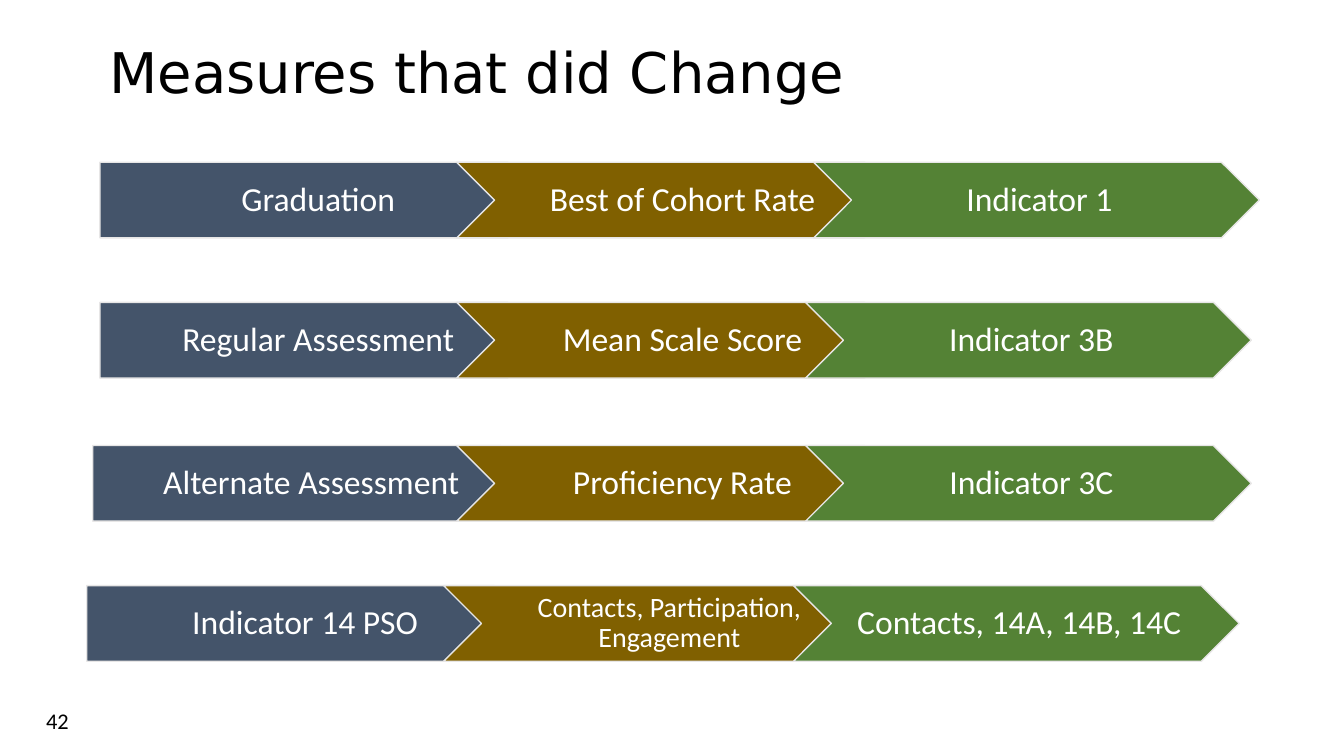
from dataclasses import dataclass

from pptx import Presentation
from pptx.dml.color import RGBColor as RGB
from pptx.enum.shapes import MSO_SHAPE as SHAPE
from pptx.enum.text import MSO_ANCHOR as ANCHOR, PP_ALIGN as ALIGN
from pptx.util import Pt

PX = 9144  # EMU per px, 100 px to the inch


@dataclass(frozen=True)
class Theme:
    title_font: str = "DejaVu Sans"
    body_font: str = "Calibri"
    title_size: int = 40
    step_size: int = 24
    small_size: int = 20
    number_size: int = 16
    black: str = "000000"
    white: str = "FFFFFF"
    outline: str = "E7E6E6"
    steps: tuple = ("44546A", "806000", "548235")


T = Theme()
STEP_W, STEP_H = 442, 75

# Top of each row, left edge of each step, and the step labels
ROWS = [
    (161, (99, 453, 807), ("Graduation", "Best of Cohort Rate", "Indicator 1")),
    (300, (99, 453, 799), ("Regular Assessment", "Mean Scale Score", "Indicator 3B")),
    (442, (92, 453, 799), ("Alternate Assessment", "Proficiency Rate", "Indicator 3C")),
    (581, (86, 440, 787), ("Indicator 14 PSO", "Contacts, Participation, Engagement",
                           "Contacts, 14A, 14B, 14C")),
]


def emu(*lengths):
    return [n * PX for n in lengths]


def write(sp, text, font, size, color, align=ALIGN.LEFT, spacing=1.0):
    tf = sp.text_frame
    tf.word_wrap = True
    tf.vertical_anchor = ANCHOR.MIDDLE
    p = tf.paragraphs[0]
    p.text = text
    p.alignment = align
    p.line_spacing = spacing
    p.font.name, p.font.size = font, Pt(size)
    p.font.color.rgb = RGB.from_string(color)
    return tf


def add_title(s, box, text):
    sp = s.shapes.add_textbox(*emu(*box))
    write(sp, text, T.title_font, T.title_size, T.black, spacing=0.9)


def add_step(group, box, column, label):
    kind = SHAPE.CHEVRON if column else SHAPE.PENTAGON
    sp = group.shapes.add_shape(kind, *emu(*box))
    sp.shadow.inherit = False
    sp.fill.solid()
    sp.fill.fore_color.rgb = RGB.from_string(T.steps[column])
    sp.line.color.rgb = RGB.from_string(T.outline)
    sp.line.width = Pt(1)

    # Long labels take the smaller size
    size = T.small_size if len(label) > 30 else T.step_size
    tf = write(sp, label, T.body_font, size, T.white, ALIGN.CENTER, 0.9)
    tf.margin_left, tf.margin_right = emu(10 if column else 14, 4)
    tf.margin_top, tf.margin_bottom = emu(7, 7)


def add_process(s, top, lefts, labels):
    group = s.shapes.add_group_shape()
    for column, (left, label) in enumerate(zip(lefts, labels)):
        add_step(group, (left, top, STEP_W, STEP_H), column, label)


def add_number(s, box, text):
    sp = s.shapes.add_textbox(*emu(*box))
    write(sp, text, T.body_font, T.number_size, T.black)


def main():
    prs = Presentation()
    prs.slide_width, prs.slide_height = emu(1333, 750)
    s = prs.slides.add_slide(prs.slide_layouts[6])

    # Heading
    add_title(s, (99, 16, 1150, 117), "Measures that did Change")

    # Measure, method and indicator rows
    for top, lefts, labels in ROWS:
        add_process(s, top, lefts, labels)

    # Slide number
    add_number(s, (36, 695, 300, 40), "42")

    prs.save("out.pptx")


if __name__ == "__main__":
    main()
